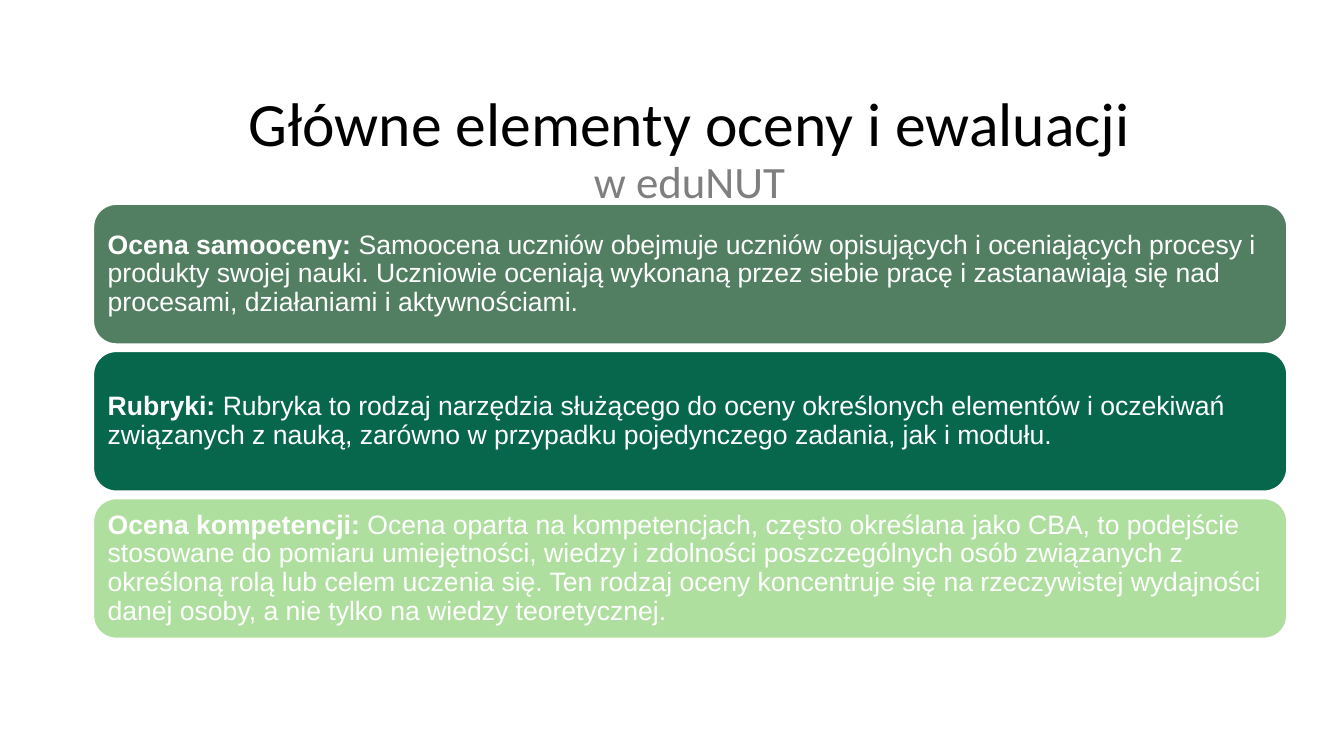
from pptx import Presentation
from pptx.dml.color import RGBColor
from pptx.enum.shapes import MSO_SHAPE
from pptx.enum.text import MSO_ANCHOR, MSO_AUTO_SIZE, PP_ALIGN
from pptx.util import Inches, Pt

# Content
HEADING = [("Główne elementy oceny i ewaluacji", 44, "000000"),
           ("w eduNUT", 32, "7F7F7F")]
ELEMENTS = [
    ("Ocena samooceny: ",
     "Samoocena uczniów obejmuje uczniów opisujących i oceniających procesy "
     "i produkty swojej nauki. Uczniowie oceniają wykonaną przez siebie pracę "
     "i zastanawiają się nad procesami, działaniami i aktywnościami.",
     "527F62"),
    ("Rubryki: ",
     "Rubryka to rodzaj narzędzia służącego do oceny określonych elementów "
     "i oczekiwań związanych z nauką, zarówno w przypadku pojedynczego "
     "zadania, jak i modułu.",
     "07674D"),
    ("Ocena kompetencji: ",
     "Ocena oparta na kompetencjach, często określana jako CBA, to podejście "
     "stosowane do pomiaru umiejętności, wiedzy i zdolności poszczególnych "
     "osób związanych z określoną rolą lub celem uczenia się. Ten rodzaj oceny "
     "koncentruje się na rzeczywistej wydajności danej osoby, a nie tylko na "
     "wiedzy teoretycznej.",
     "AFDF9F"),
]

# Layout in inches
LEFT, TOP, WIDTH, HEIGHT, GAP = 0.92, 2.02, 11.85, 1.4, 0.06
TITLE_BOX = {"left": 1.09, "top": 0.82, "width": 11.5, "height": 1.35}
TITLE_FRAME = {"margin_left": Inches(0.1), "margin_right": Inches(0.1),
               "margin_top": Inches(0.05), "margin_bottom": Inches(0.05)}
PANEL_FRAME = {"margin_" + side: Inches(0.08)
               for side in ("left", "right", "top", "bottom")}
COMMON_FRAME = {"word_wrap": True, "vertical_anchor": MSO_ANCHOR.MIDDLE,
                "auto_size": MSO_AUTO_SIZE.NONE}


def color(hex_value):
    return RGBColor.from_string(hex_value)


def set_all(target, values):
    for key, value in values.items():
        setattr(target, key, value)


def add_run(paragraph, text, size, font, hex_value, bold=False):
    run = paragraph.add_run()
    run.text = text
    set_all(run.font, {"size": Pt(size), "name": font, "bold": bold})
    run.font.color.rgb = color(hex_value)


def prepare(frame, margins, alignment):
    set_all(frame, {**COMMON_FRAME, **margins})
    paragraph = frame.paragraphs[0]
    set_all(paragraph, {"alignment": alignment, "line_spacing": 0.9,
                        "space_before": Pt(0)})
    return paragraph


prs = Presentation()
prs.slide_width, prs.slide_height = Inches(13.33), Inches(7.5)
slide = prs.slides.add_slide(prs.slide_layouts[5])

# Heading on two lines
heading = slide.shapes.title
set_all(heading, {key: Inches(value) for key, value in TITLE_BOX.items()})
heading_line = prepare(heading.text_frame, TITLE_FRAME, PP_ALIGN.CENTER)
for index, (text, size, hex_value) in enumerate(HEADING):
    if index:
        heading_line.add_line_break()
    add_run(heading_line, text, size, "Calibri", hex_value)

# Stacked panels, one for each element
for index, (term, description, fill) in enumerate(ELEMENTS):
    panel = slide.shapes.add_shape(
        MSO_SHAPE.ROUNDED_RECTANGLE, Inches(LEFT),
        Inches(TOP + index * (HEIGHT + GAP)), Inches(WIDTH), Inches(HEIGHT))
    panel.shadow.inherit = False
    panel.fill.solid()
    panel.fill.fore_color.rgb = color(fill)
    panel.line.color.rgb = color("FFFFFF")
    panel.line.width = Pt(2)
    panel_text = prepare(panel.text_frame, PANEL_FRAME, PP_ALIGN.LEFT)
    add_run(panel_text, term, 19, "Arial", "FFFFFF", bold=True)
    add_run(panel_text, description, 19, "Arial", "FFFFFF")

prs.save("out.pptx")
